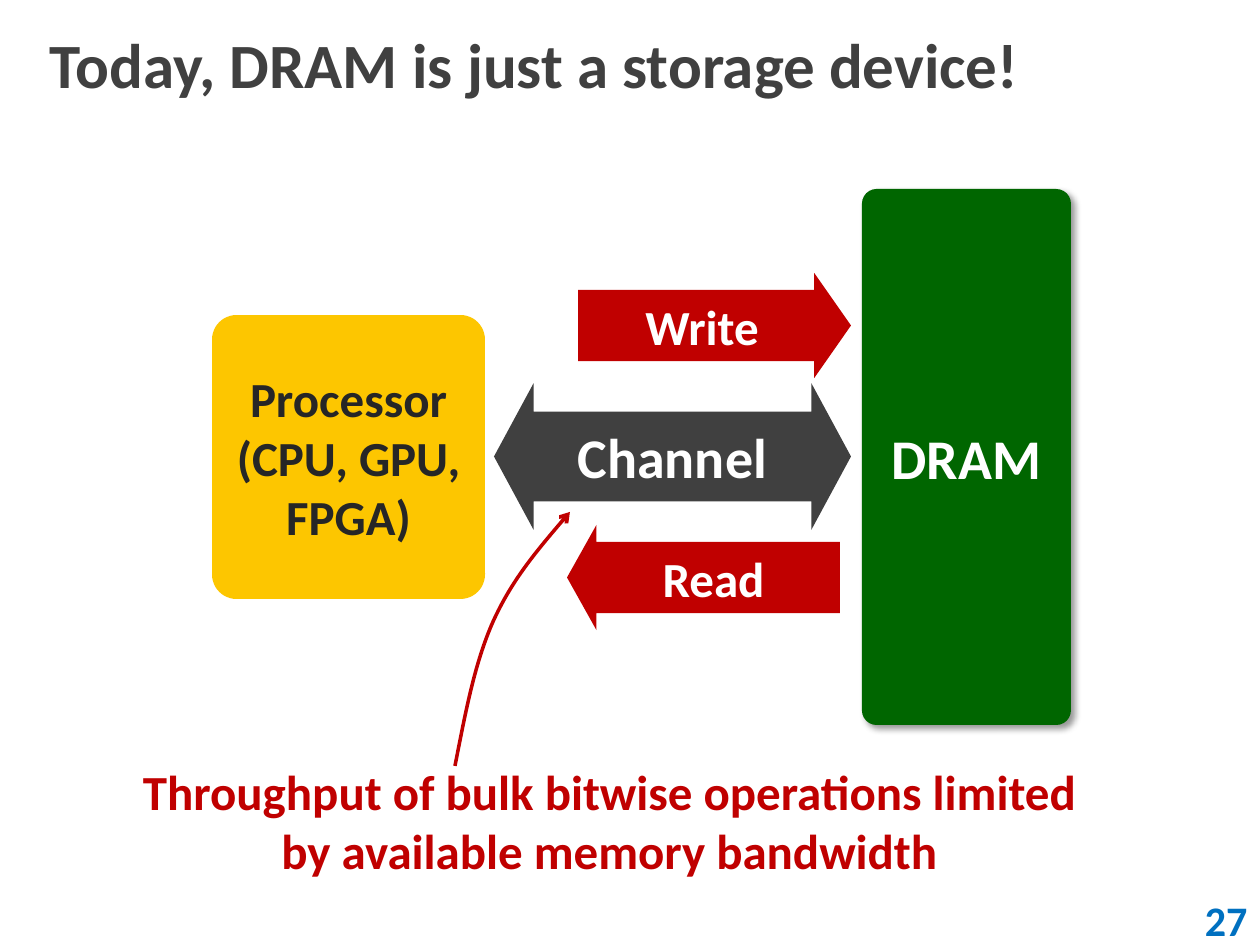
from lxml import etree
from pptx import Presentation, util as u
from pptx.dml.color import RGBColor
from pptx.enum import shapes, text
from pptx.oxml.ns import qn

PX = 914400 // 126
RED, DARK, WHITE = "C00000", "404040", "FFFFFF"
LEFT, CENTER, RIGHT = text.PP_ALIGN.LEFT, text.PP_ALIGN.CENTER, text.PP_ALIGN.RIGHT
MIDDLE, TOP = text.MSO_ANCHOR.MIDDLE, text.MSO_ANCHOR.TOP
KIND = shapes.MSO_SHAPE

# kind, box, adjustments, fill, lines, size, colour, alignment
SHAPES = [
    (KIND.RECTANGLE, (1008, 895, 252, 50), [], WHITE, "27", 24, "0070C0", RIGHT),
    (KIND.ROUNDED_RECTANGLE, (212, 315, 273, 284), [0.09], "FDC600",
     "Processor\n(CPU, GPU, FPGA)", 28, "262626", CENTER),
    (KIND.ROUNDED_RECTANGLE, (862, 189, 209, 536), [0.07], "006600", "DRAM", 32, WHITE, CENTER),
    (KIND.LEFT_RIGHT_ARROW, (494, 383, 357, 147), [0.61, 0.27], DARK, "Channel", 32, WHITE, CENTER),
    (KIND.RIGHT_ARROW, (578, 273, 273, 105), [0.68, 0.35], RED, "Write", 28, WHITE, CENTER),
    (KIND.LEFT_ARROW, (567, 525, 273, 105), [0.68, 0.28], RED, "Read", 28, WHITE, CENTER),
]
# box, left inset, anchor, words, size, colour, alignment
LABELS = [
    ((0, 0, 1260, 126), 50, MIDDLE, "Today, DRAM is just a storage device!", 36, DARK, LEFT),
    ((105, 755, 1008, 131), 13, TOP,
     "Throughput of bulk bitwise operations limited by available memory bandwidth",
     28, RED, CENTER),
]
POINTER = [(455, 766), (465, 716), (474, 665), (493, 622), (512, 580), (541, 546), (570, 512)]


def rgb(value):
    """Turn a hex string into a colour."""
    return RGBColor.from_string(value)


def write(sp, words, size, color, align, anchor=MIDDLE):
    """Set and format the text of a shape."""
    tf = sp.text_frame
    tf.word_wrap = True
    tf.vertical_anchor = anchor
    tf.text = words
    for p in tf.paragraphs:
        p.alignment = align
        for r in p.runs:
            r.font.name, r.font.size, r.font.bold = "Calibri", u.Pt(size), True
            r.font.color.rgb = rgb(color)


def add_label(s, box, inset, anchor, *style):
    """Add a text box."""
    sp = s.shapes.add_textbox(*(v * PX for v in box))
    sp.text_frame.margin_left = inset * PX
    write(sp, *style, anchor)


def add_block(s, kind, box, adjustments, fill, *style):
    """Add a filled shape with text."""
    sp = s.shapes.add_shape(kind, *(v * PX for v in box))
    sp.shadow.inherit = False
    sp.fill.solid()
    sp.fill.fore_color.rgb = rgb(fill)
    sp.line.fill.background()
    for i, value in enumerate(adjustments):
        sp.adjustments[i] = value
    write(sp, *style)
    return sp


def add_shadow(sp):
    """Give a shape a soft shadow to the lower right."""
    effects = sp._element.spPr.find(qn("a:effectLst"))
    shadow = etree.SubElement(effects, qn("a:outerShdw"), blurRad=str(u.Pt(4)),
                              dist=str(u.Pt(3)), dir="2700000", algn="tl", rotWithShape="0")
    color = etree.SubElement(shadow, qn("a:srgbClr"), val="000000")
    etree.SubElement(color, qn("a:alpha"), val="40000")


def add_pointer(s, points):
    """Draw a curved arrow through Bezier control points."""
    builder = s.shapes.build_freeform(*points[0], scale=PX)
    builder.add_line_segments(points[1:], close=False)
    sp = builder.convert_to_shape()
    sp.shadow.inherit = False
    sp.fill.background()
    sp.line.color.rgb = rgb(RED)
    sp.line.width = u.Pt(2)
    etree.SubElement(sp.line._get_or_add_ln(), qn("a:tailEnd"), type="arrow")
    segments = list(sp._element.iter(qn("a:lnTo")))
    outline = segments[0].getparent()
    for i in range(0, len(segments), 3):
        curve = etree.SubElement(outline, qn("a:cubicBezTo"))
        for segment in segments[i:i + 3]:
            curve.append(segment[0])
            outline.remove(segment)


def main():
    """Build the slide."""
    prs = Presentation()
    prs.slide_width, prs.slide_height = u.Inches(10), u.Inches(7.5)
    s = prs.slides.add_slide(prs.slide_layouts[6])
    title, caption = LABELS
    add_label(s, *title)
    blocks = [add_block(s, *block) for block in SHAPES]
    add_shadow(blocks[2])
    add_label(s, *caption)
    add_pointer(s, POINTER)
    prs.save("out.pptx")


if __name__ == "__main__":
    main()
